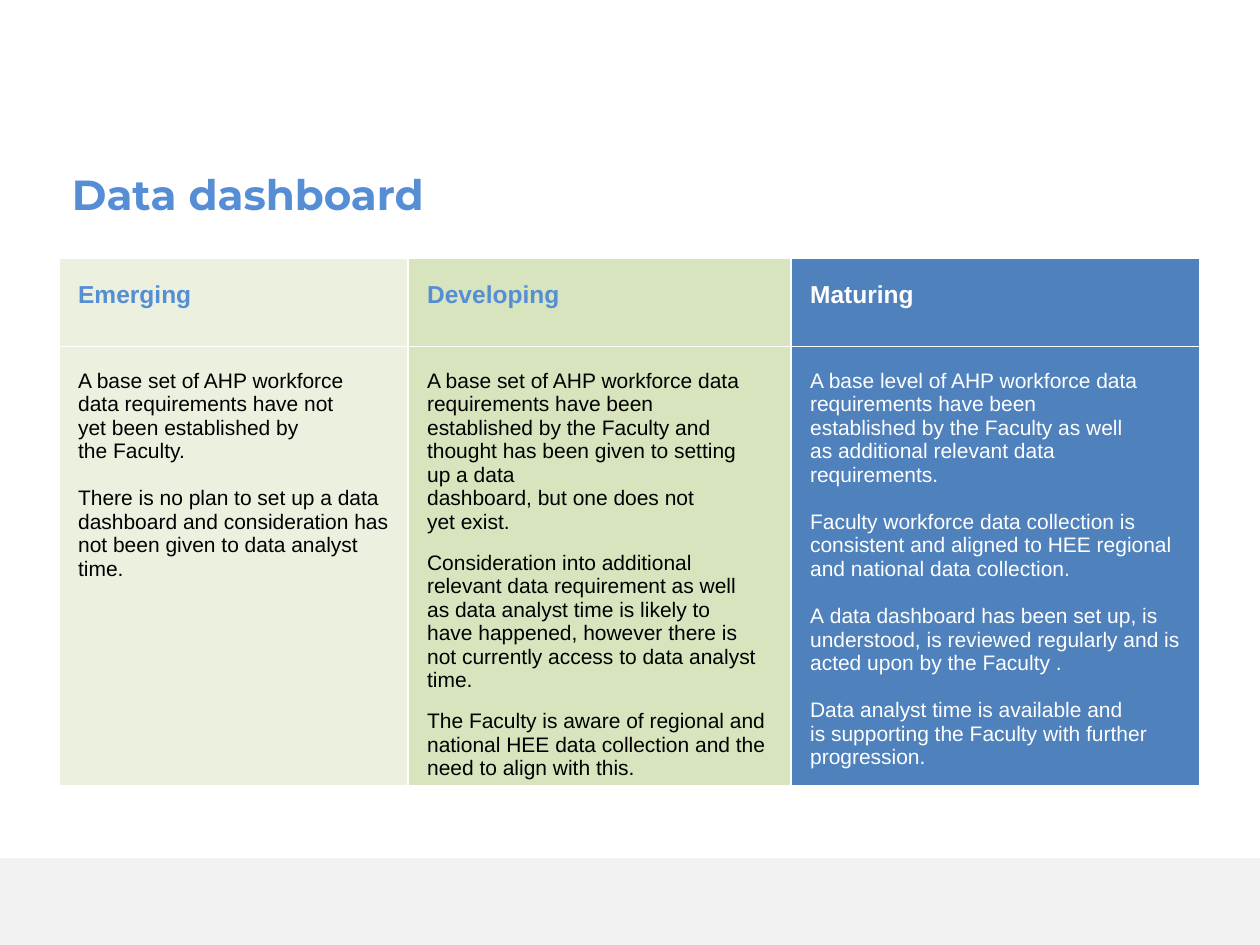
from lxml import etree
from pptx import Presentation
from pptx.dml.color import RGBColor
from pptx.enum import shapes, text
from pptx.oxml import ns
from pptx.util import Inches, Pt

COLORS = {"blue": "558ED5", "white": "FFFFFF", "black": "000000", "footer": "F2F2F2",
          "emerging": "EBF1DE", "developing": "D7E4BD", "maturing": "4F81BD"}

# "~" stands for a no-break space, which would be invisible here.
# Each stage: heading, width, fill, heading colour, body colour, paragraph gap, body
STAGES = [
    ("Emerging", 2.77, "emerging", "blue", "black", 13.5, [
        "A base set of AHP workforce data requirements~have not yet~been~established~by "
        "the~Faculty.",
        "There is no plan~to~set~up a data dashboard~and consideration has not~been given "
        "to data analyst time.",
    ]),
    ("Developing", 3.04, "developing", "blue", "black", 10, [
        "A base set of AHP workforce data requirements have been established~by the~Faculty"
        "~and thought~has been given to setting up~a~data~\n"
        "dashboard,~but one does not yet~exist.~",
        "Consideration~into~additional relevant data requirement as well as~data~analyst"
        "~time~is likely to have~happened,~however~there is not~currently access to data "
        "analyst time.~",
        "The Faculty is aware of regional and national HEE data collection and the need to "
        "align with this.",
    ]),
    ("Maturing", 3.24, "maturing", "white", "white", 13.5, [
        "A base level of AHP workforce data requirements have been established~by~the "
        "Faculty~as well as~additional relevant data requirements.",
        "Faculty workforce data collection is consistent and aligned to HEE regional and "
        "national data collection.~",
        "A~data dashboard has been~set up, is understood, is reviewed regularly and is "
        "acted upon by the Faculty~.",
        "Data analyst time is available and is~supporting the Faculty with further "
        "progression.~",
    ]),
]
ROW_HEIGHTS = [0.7, 3.47]


def set_font(p, name, size, color, bold):
    p.font.name = name
    p.font.size = Pt(size)
    p.font.bold = bold
    p.font.color.rgb = RGBColor.from_string(COLORS[color])


def add_borders(cell, color):
    """Draw a 1 pt line on all four sides; call before filling the cell."""
    tc_pr = cell._tc.get_or_add_tcPr()
    for side in ("lnL", "lnR", "lnT", "lnB"):
        ln = etree.SubElement(tc_pr, ns.qn(f"a:{side}"), w=str(Pt(1)))
        fill = etree.SubElement(ln, ns.qn("a:solidFill"))
        etree.SubElement(fill, ns.qn("a:srgbClr"), val=COLORS[color])


prs = Presentation()
prs.slide_width, prs.slide_height = Inches(10), Inches(7.5)
s = prs.slides.add_slide(prs.slide_layouts[5])

# Footer band
band = s.shapes.add_shape(shapes.MSO_SHAPE.RECTANGLE,
                          Inches(0), Inches(6.81), Inches(10), Inches(0.69))
band.shadow.inherit = False
band.fill.solid()
band.fill.fore_color.rgb = RGBColor.from_string(COLORS["footer"])
band.line.fill.background()

# Title
title = s.shapes.title
title.left, title.top = Inches(0.47), Inches(1.29)
title.width, title.height = Inches(3.1), Inches(0.5)
tf = title.text_frame
tf.word_wrap = False
tf.auto_size = text.MSO_AUTO_SIZE.NONE
tf.vertical_anchor = text.MSO_ANCHOR.TOP
p = tf.paragraphs[0]
p.text = "Data dashboard"
p.alignment = text.PP_ALIGN.LEFT
set_font(p, "Montserrat", 24, "blue", True)

# Maturity table
table = s.shapes.add_table(2, len(STAGES), Inches(0.47), Inches(2.05),
                           Inches(9.05), Inches(sum(ROW_HEIGHTS))).table
table.horz_banding = False
for row, height in zip(table.rows, ROW_HEIGHTS):
    row.height = Inches(height)

for col, (heading, width, fill, head_color, body_color, gap, body) in enumerate(STAGES):
    table.columns[col].width = Inches(width)
    contents = [([heading], 14, head_color, True), (body, 12, body_color, False)]
    for row, (paragraphs, size, color, bold) in enumerate(contents):
        cell = table.cell(row, col)
        add_borders(cell, "white")
        cell.fill.solid()
        cell.fill.fore_color.rgb = RGBColor.from_string(COLORS[fill])
        cell.margin_left = cell.margin_right = Inches(0.15)
        cell.margin_top, cell.margin_bottom = Inches(0.18), Inches(0.04)
        tf = cell.text_frame
        for i, words in enumerate(paragraphs):
            p = tf.add_paragraph() if i else tf.paragraphs[0]
            p.text = words.replace("~", chr(160))
            if i:
                p.space_before = Pt(gap)
            set_font(p, "Arial", size, color, bold)

prs.save("out.pptx")
